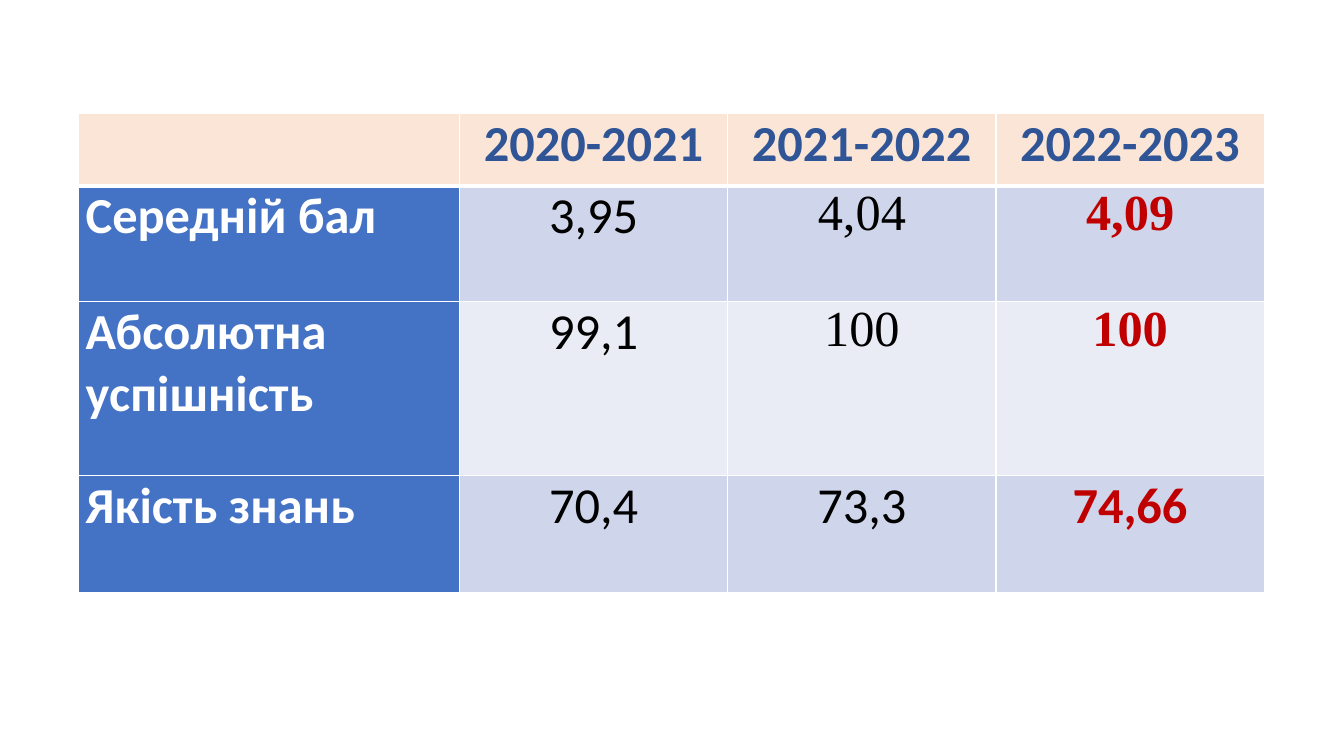
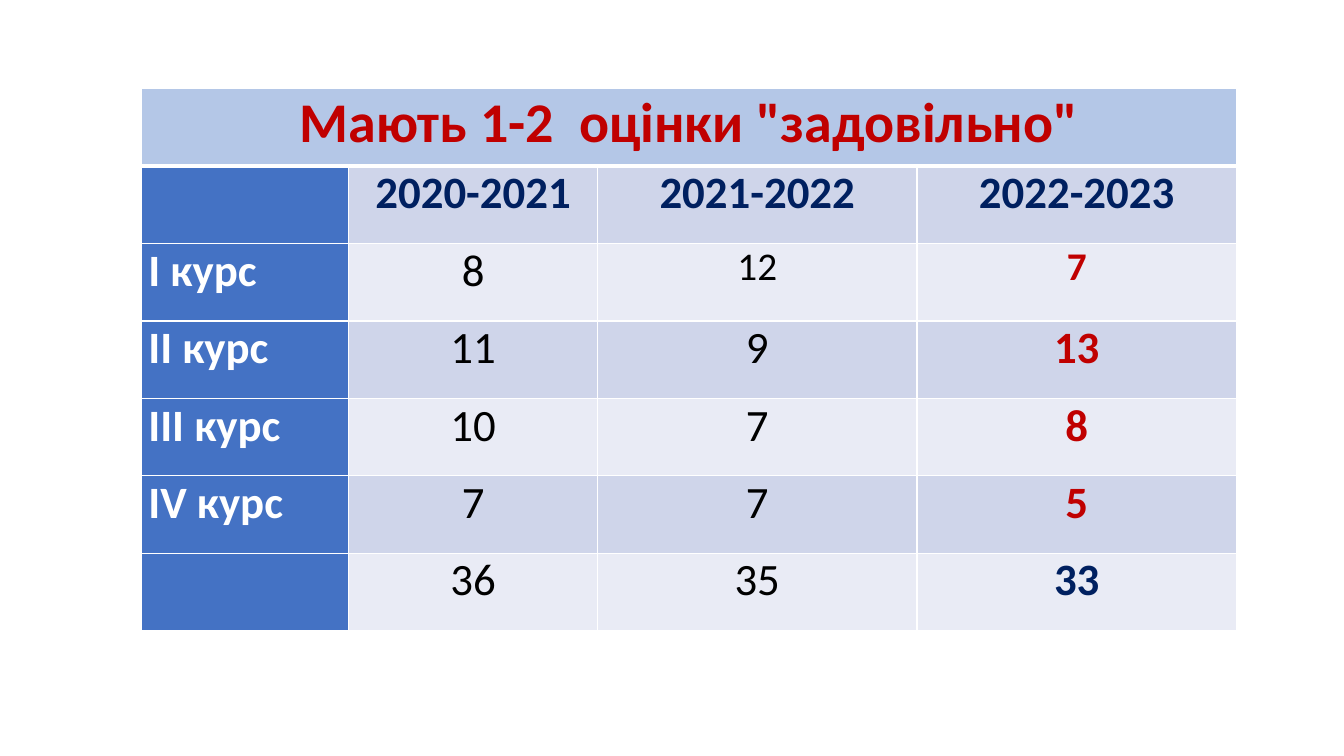
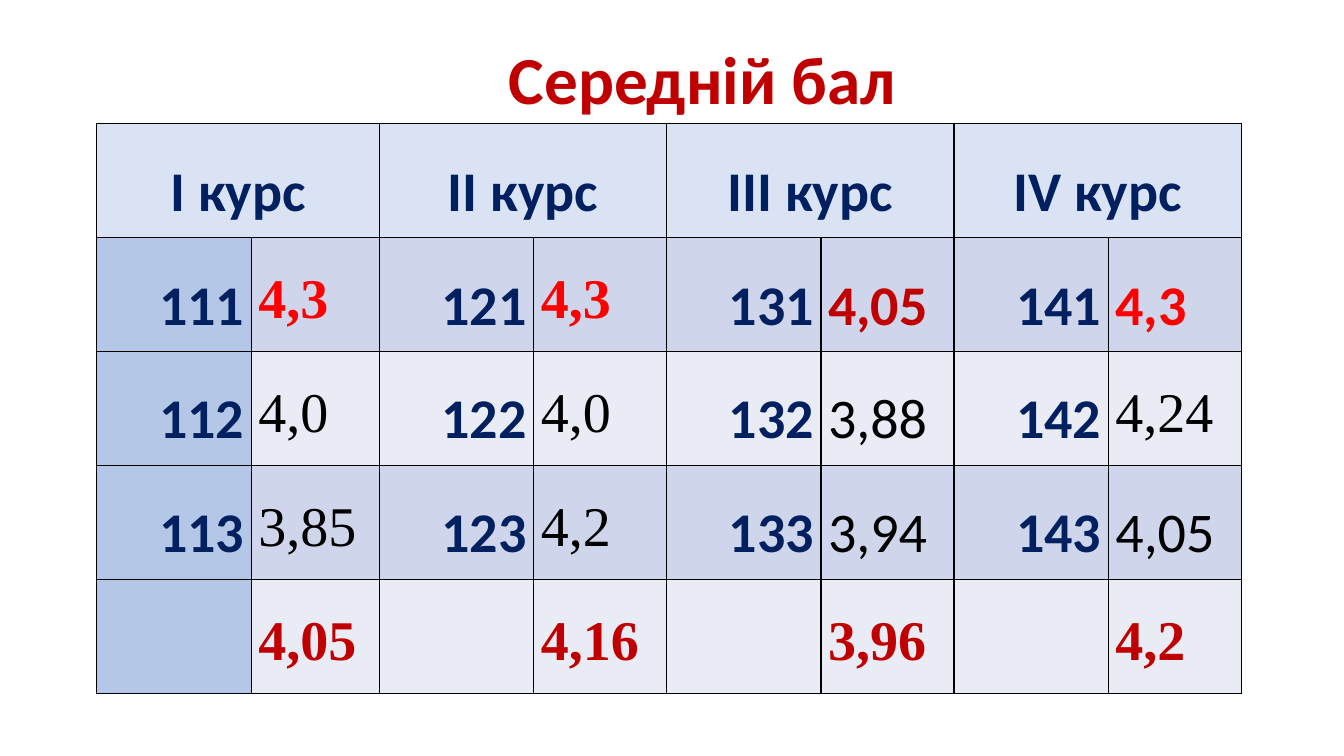
from lxml.etree import SubElement
from pptx import Presentation
from pptx.dml.color import RGBColor
from pptx.enum.text import MSO_ANCHOR, PP_ALIGN
from pptx.oxml.ns import qn
from pptx.util import Cm, Pt

paint = RGBColor.from_string

WHITE, BLACK = "FFFFFF", "000000"
NAVY, BLUE, CRIMSON, RED = "002060", "4472C4", "C00000", "FF0000"
PALE_BLUE = "B4C7E7"
BANDS = ["E9EBF5", "CFD5EA"]
SERIF = "Times New Roman"


def write_text(frame, text, size=36, font="Calibri", color=BLACK, bold=False,
               align=PP_ALIGN.CENTER, spacing=1.0):
    para = frame.paragraphs[0]
    para.alignment = align
    para.line_spacing = spacing
    span = para.add_run()
    span.text = text
    span.font.size = Pt(size)
    span.font.name = font
    span.font.bold = bold
    span.font.color.rgb = paint(color)


def style_cell(cell, fill, line, top=1, bottom=1):
    cell.margin_left = cell.margin_right = Cm(0.18)
    cell.margin_top = cell.margin_bottom = 0
    props = cell._tc.get_or_add_tcPr()
    for side, width in (("L", 1), ("R", 1), ("T", top), ("B", bottom)):
        edge = SubElement(props, qn(f"a:ln{side}"), w=str(Pt(width)))
        SubElement(SubElement(edge, qn("a:solidFill")), qn("a:srgbClr"), val=line)
    cell.fill.solid()
    cell.fill.fore_color.rgb = paint(fill)


row_label = dict(color=WHITE, bold=True, align=PP_ALIGN.JUSTIFY)
latest = dict(color=CRIMSON, bold=True)
heading = dict(color=NAVY, bold=True)
group = dict(heading, align=PP_ALIGN.RIGHT)
score = dict(font=SERIF, align=PP_ALIGN.JUSTIFY)
plain_score = dict(align=PP_ALIGN.JUSTIFY)
best = dict(color=RED, bold=True)

years = ["2020-2021", "2021-2022", "2022-2023"]

results = dict(
    left=1.98, top=2.87,
    widths=[9.6] + [6.76] * 3, heights=[1.81, 2.92, 4.39, 2.93],
    line=WHITE, rule=3, span=1, head_fill="FBE5D6", side_fill=BLUE,
    common=dict(size=36),
    head=dict(color="2F5597", bold=True),
    columns=[row_label, {}, {}, latest],
    special={(row, col): dict(font=SERIF) for row in (1, 2) for col in (2, 3)},
    rows=[
        ["", *years],
        ["Середній бал", "3,95", "4,04", "4,09"],
        ["Абсолютна успішність", "99,1", "100", "100"],
        ["Якість знань", "70,4", "73,3", "74,66"],
    ],
)

satisfactory = dict(
    left=3.56, top=2.24,
    widths=[5.23, 6.27, 8.05, 8.05], heights=[1.95] * 7,
    line=WHITE, rule=3, span=4, head_fill=PALE_BLUE, side_fill=BLUE,
    common=dict(size=32),
    head=dict(size=40, color=CRIMSON, bold=True),
    columns=[row_label, {}, {}, latest],
    special={(1, col): heading for col in (1, 2, 3)}
    | {(2, 2): dict(size=28), (2, 3): dict(size=28), (6, 3): heading},
    rows=[
        ['Мають 1-2  оцінки "задовільно"', "", "", ""],
        ["", *years],
        ["І курс", "8", "12", "7"],
        ["ІІ курс", "11", "9", "13"],
        ["ІІІ курс", "10", "7", "8"],
        ["ІV курс", "7", "7", "5"],
        ["", "36", "35", "33"],
    ],
)

averages = dict(
    left=2.44, top=3.12,
    widths=[3.89, 3.23] + [3.89, 3.35] * 3, heights=[2.87] * 5,
    line=BLACK, rule=1, span=2, head_fill="DAE3F3", side_fill=PALE_BLUE,
    common=dict(size=40, spacing=1.5),
    head=heading,
    columns=[group, score, group, score, group, plain_score, group, plain_score],
    special={(1, col): best for col in (1, 3, 7)}
    | {(4, col): dict(latest, font=SERIF) for col in (1, 3, 5, 7)}
    | {(1, 5): latest, (2, 7): dict(font=SERIF)},
    rows=[
        ["І курс", "", "ІІ курс", "", "ІІІ курс", "", "ІV курс", ""],
        ["111", "4,3", "121", "4,3", "131", "4,05", "141", "4,3"],
        ["112", "4,0", "122", "4,0", "132", "3,88", "142", "4,24"],
        ["113", "3,85", "123", "4,2", "133", "3,94", "143", "4,05"],
        ["", "4,05", "", "4,16", "", "3,96", "", "4,2"],
    ],
)

deck = Presentation()
deck.slide_width, deck.slide_height = Cm(33.87), Cm(19.05)

for plan in (results, satisfactory, averages):
    page = deck.slides.add_slide(deck.slide_layouts[6])
    widths, heights = plan["widths"], plan["heights"]
    table = page.shapes.add_table(
        len(heights), len(widths), Cm(plan["left"]), Cm(plan["top"]),
        Cm(sum(widths)), Cm(sum(heights))).table
    table.horz_banding = False
    for column, width in zip(table.columns, widths):
        column.width = Cm(width)
    for table_row, height in zip(table.rows, heights):
        table_row.height = Cm(height)

    for row, texts in enumerate(plan["rows"]):
        for col, text in enumerate(texts):
            cell = table.cell(row, col)
            if row == 0:
                fill, look = plan["head_fill"], plan["head"]
            else:
                fill = plan["side_fill"] if col == 0 else BANDS[row % 2]
                look = plan["columns"][col] | plan["special"].get((row, col), {})
            style_cell(cell, fill, plan["line"],
                       top=plan["rule"] if row == 1 else 1,
                       bottom=plan["rule"] if row == 0 else 1)
            if text:
                write_text(cell.text_frame, text, **(plan["common"] | look))

    if plan["span"] > 1:
        for col in range(0, len(widths), plan["span"]):
            table.cell(0, col).merge(table.cell(0, col + plan["span"] - 1))

title = page.shapes.add_textbox(Cm(3.15), Cm(1.02), Cm(29.11), Cm(2.11))
title.text_frame.word_wrap = True
title.text_frame.vertical_anchor = MSO_ANCHOR.MIDDLE
write_text(title.text_frame, "Середній бал", size=48, color=CRIMSON, bold=True, spacing=0.9)

deck.save("out.pptx")
